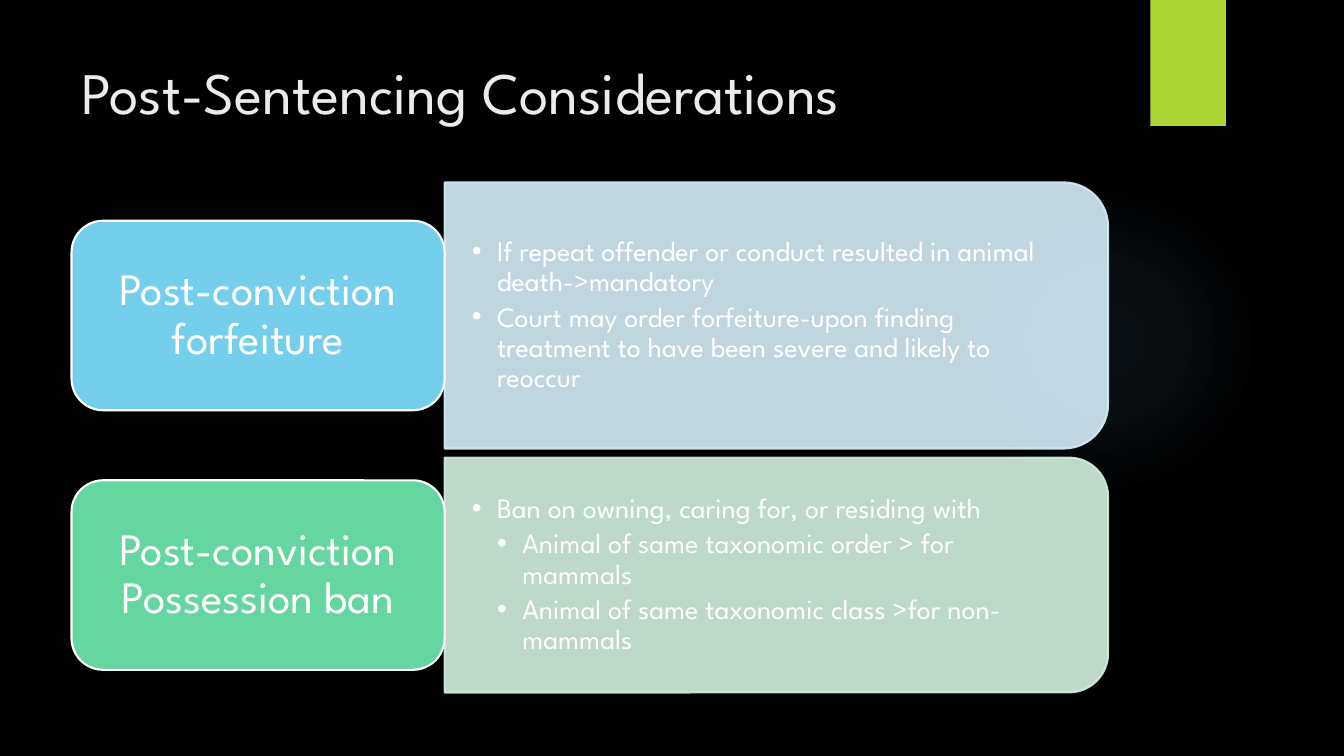
from lxml import etree
from pptx import Presentation
from pptx.dml.color import RGBColor
from pptx.enum.shapes import MSO_SHAPE
from pptx.enum.text import MSO_ANCHOR, MSO_AUTO_SIZE, PP_ALIGN
from pptx.oxml import parse_xml
from pptx.oxml.ns import nsdecls, qn
from pptx.util import Inches, Pt

ELLIPSE, RECTANGLE = MSO_SHAPE.OVAL, MSO_SHAPE.RECTANGLE
ROUNDED = MSO_SHAPE.ROUNDED_RECTANGLE
ROUND_TOP = MSO_SHAPE.ROUND_2_SAME_RECTANGLE
TOP, MIDDLE = MSO_ANCHOR.TOP, MSO_ANCHOR.MIDDLE
NO_FIT = MSO_AUTO_SIZE.NONE
LEFT, CENTER = PP_ALIGN.LEFT, PP_ALIGN.CENTER

FONT = "League Spartan"
BLACK = RGBColor(0x00, 0x00, 0x00)
WHITE = RGBColor(0xFF, 0xFF, 0xFF)
TITLE_COLOR = RGBColor(0xEB, 0xEB, 0xEB)
GLOW_COLOR = RGBColor(0x7A, 0xC4, 0xF0)
LIME = RGBColor(0xAC, 0xD4, 0x33)
BLUE, PALE_BLUE = RGBColor(0x75, 0xCE, 0xEC), RGBColor(0xD6, 0xED, 0xF8)
GREEN, PALE_GREEN = RGBColor(0x65, 0xD6, 0xA0), RGBColor(0xD3, 0xF0, 0xDF)

LABEL_LEFT, LABEL_WIDTH, LABEL_HEIGHT = 0.71, 3.7, 1.88
PANEL_LEFT, PANEL_WIDTH = LABEL_LEFT + LABEL_WIDTH, 6.58

TOPICS = [
    ("Post-conviction forfeiture", BLUE, PALE_BLUE, 1.81, 2.64, [
        (0, "If repeat offender or conduct resulted in animal death->mandatory"),
        (0, "Court may order forfeiture-upon finding treatment to have been "
            "severe and likely to reoccur"),
    ]),
    ("Post-conviction Possession ban", GREEN, PALE_GREEN, 4.54, 2.33, [
        (0, "Ban on owning, caring for, or residing with"),
        (1, "Animal of same taxonomic order > for mammals"),
        (1, "Animal of same taxonomic class >for non-mammals"),
    ]),
]


def place(shape, left, top, width, height):
    """Move and size a shape, in inches."""
    shape.left, shape.top = Inches(left), Inches(top)
    shape.width, shape.height = Inches(width), Inches(height)


def add_block(slide, kind, box, fill, line=None):
    """Add a flat preset shape."""
    shape = slide.shapes.add_shape(kind, *map(Inches, box))
    shape.shadow.inherit = False
    shape.fill.solid()
    shape.fill.fore_color.rgb = fill
    if line is None:
        shape.line.fill.background()
    else:
        shape.line.color.rgb = line
        shape.line.width = Pt(1.5)
    return shape


def prepare_frame(shape, anchor, horizontal, vertical):
    """Set wrapping, anchor and insets, and return the text frame."""
    frame = shape.text_frame
    frame.word_wrap = True
    frame.auto_size = NO_FIT
    frame.vertical_anchor = anchor
    frame.margin_left = frame.margin_right = Inches(horizontal)
    frame.margin_top = frame.margin_bottom = Inches(vertical)
    return frame


def format_paragraph(paragraph, size, color, alignment):
    """Set the alignment, spacing and font of a paragraph."""
    paragraph.alignment = alignment
    paragraph.line_spacing = 0.9
    paragraph.space_before = Pt(0)
    for run in paragraph.runs:
        run.font.name = FONT
        run.font.size = Pt(size)
        run.font.color.rgb = color


def add_glow(slide):
    """Add the faint radial glow."""
    glow = add_block(slide, ELLIPSE, (9.41, 1.83, 3.08, 3.08), GLOW_COLOR)
    stops = "".join(
        f'<a:gs pos="{position}000"><a:srgbClr val="{GLOW_COLOR}">'
        f'<a:alpha val="{alpha}000"/></a:srgbClr></a:gs>'
        for position, alpha in ((0, 7), (36, 6), (69, 0)))
    gradient = parse_xml(
        f'<a:gradFill {nsdecls("a")}><a:gsLst>{stops}</a:gsLst>'
        '<a:path path="circle"><a:fillToRect l="50000" t="50000" r="50000" '
        'b="50000"/></a:path></a:gradFill>')
    properties = glow.element.spPr
    properties.replace(properties.find(qn("a:solidFill")), gradient)


def add_tab(slide):
    """Add the lime tab with its soft shadow."""
    tab = add_block(slide, RECTANGLE, (11.41, 0, 0.75, 1.25), LIME)
    effects = tab.element.spPr.find(qn("a:effectLst"))
    effects.append(parse_xml(
        f'<a:outerShdw {nsdecls("a")} blurRad="{Pt(3)}" dist="{Pt(2)}" '
        'dir="5400000" rotWithShape="0"><a:srgbClr val="000000">'
        '<a:alpha val="45000"/></a:srgbClr></a:outerShdw>'))


def add_title(slide, text):
    """Fill the title placeholder."""
    title = slide.shapes.title
    place(title, 0.71, 0.5, 10.29, 1.53)
    frame = prepare_frame(title, TOP, 0.1, 0.05)
    frame.text = text
    format_paragraph(frame.paragraphs[0], 42, TITLE_COLOR, LEFT)
    frame.paragraphs[0].line_spacing = 1.0


def add_panel(slide, color, top, height):
    """Add a translucent panel rounded on its right side."""
    box = (PANEL_LEFT + (PANEL_WIDTH - height) / 2,
           top + (height - PANEL_WIDTH) / 2, height, PANEL_WIDTH)
    panel = add_block(slide, ROUND_TOP, box, color, color)
    panel.rotation = 90
    for tint in panel.element.spPr.iter(qn("a:srgbClr")):
        etree.SubElement(tint, qn("a:alpha")).set("val", "90000")


def fill_list(slide, placeholder, items, top, height):
    """Put a bulleted list in a placeholder in front of its panel."""
    slide.shapes.element.append(placeholder.element)
    place(placeholder, PANEL_LEFT, top + 0.12, 6.45, height - 0.24)
    frame = prepare_frame(placeholder, MIDDLE, 0.27, 0.14)
    frame.text = "\n".join(text for _, text in items)
    for paragraph, (level, _) in zip(frame.paragraphs, items):
        paragraph.level = level
        format_paragraph(paragraph, 20, WHITE, LEFT)
        paragraph.space_after = Pt(3.5)
        properties = paragraph._p.get_or_add_pPr()
        properties.set("marL", str(Inches(0.25 * (level + 1))))
        properties.set("indent", str(Inches(-0.25)))
        etree.SubElement(properties, qn("a:buChar")).set("char", "•")


def add_label(slide, text, color, middle):
    """Add a rounded label centred on a height."""
    box = (LABEL_LEFT, middle - LABEL_HEIGHT / 2, LABEL_WIDTH, LABEL_HEIGHT)
    label = add_block(slide, ROUNDED, box, color, WHITE)
    frame = prepare_frame(label, MIDDLE, 0.22, 0.16)
    frame.text = text
    format_paragraph(frame.paragraphs[0], 32, WHITE, CENTER)


def main():
    """Build the slide and save it."""
    presentation = Presentation()
    presentation.slide_width = Inches(13.33)
    presentation.slide_height = Inches(7.5)
    slide = presentation.slides.add_slide(presentation.slide_layouts[3])
    slide.background.fill.solid()
    slide.background.fill.fore_color.rgb = BLACK
    add_glow(slide)
    add_tab(slide)
    add_title(slide, "Post-Sentencing Considerations")
    lists = [slide.placeholders[1], slide.placeholders[2]]
    for placeholder, topic in zip(lists, TOPICS):
        label, color, pale, top, height, items = topic
        add_panel(slide, pale, top, height)
        fill_list(slide, placeholder, items, top, height)
        add_label(slide, label, color, top + height / 2)
    presentation.save("out.pptx")


if __name__ == "__main__":
    main()
